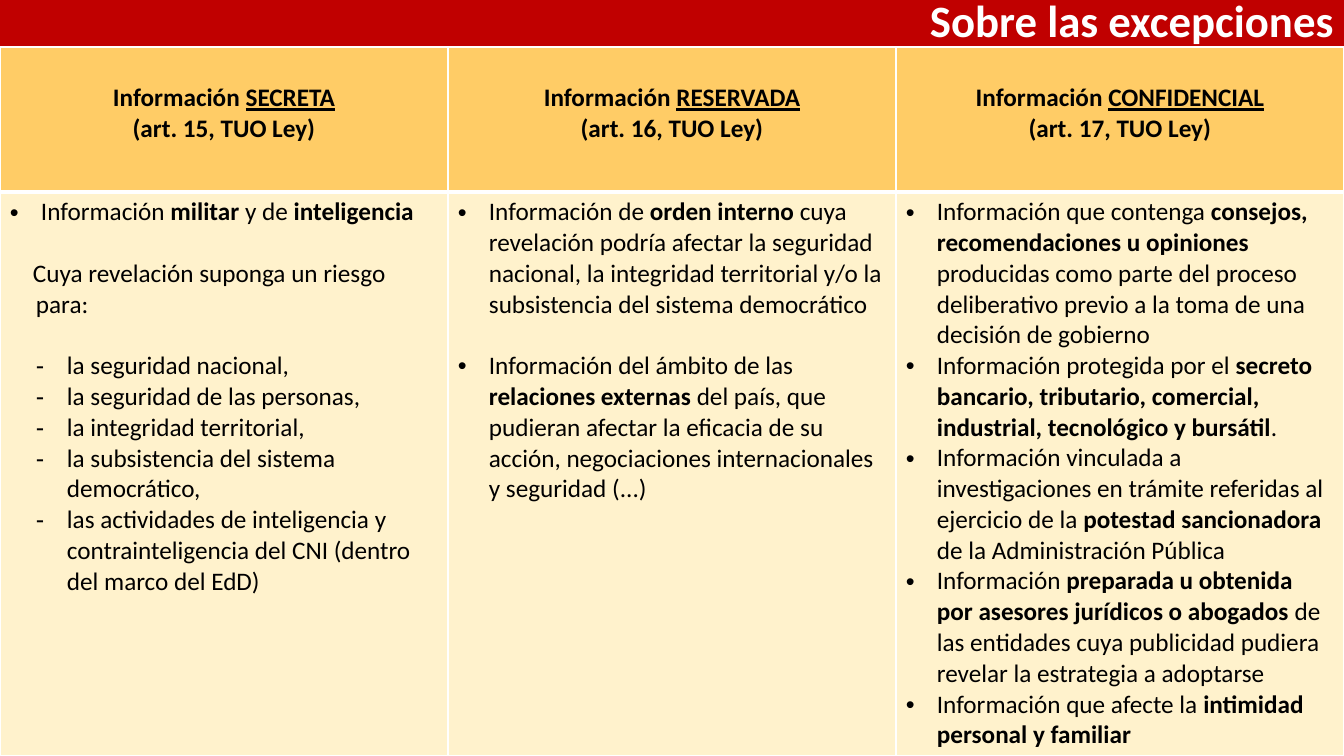
from dataclasses import dataclass

from lxml import etree
from pptx import Presentation
from pptx.dml.color import RGBColor
from pptx.enum.shapes import MSO_SHAPE
from pptx.enum.text import MSO_ANCHOR, PP_ALIGN
from pptx.oxml.ns import qn
from pptx.util import Pt

RECTANGLE = MSO_SHAPE.RECTANGLE
TOP, MIDDLE = MSO_ANCHOR.TOP, MSO_ANCHOR.MIDDLE
LEFT, CENTER, RIGHT = PP_ALIGN.LEFT, PP_ALIGN.CENTER, PP_ALIGN.RIGHT

SLIDE_W, SLIDE_H = 1344, 756
EMU_PER_PX = 12192000 / SLIDE_W
TITLE_H, HEADER_H = 47, 145
BODY_H = SLIDE_H - TITLE_H - HEADER_H
PAD_X, PAD_Y = 10, 5
HEADER_PAD_TOP = 36


@dataclass(frozen=True)
class Theme:
    font: str = "Calibri"
    bullet_font: str = "Arial"
    title_size: int = 32
    text_size: int = 18
    line_gap: int = 22
    thin: int = 1
    thick: int = 3
    red: str = "C00000"
    amber: str = "FFCC66"
    cream: str = "FFF2CC"
    white: str = "FFFFFF"
    black: str = "000000"


THEME = Theme()

# Paragraph layouts: left margin and first-line indent in px, with the marker.
DOT = dict(margin=31, indent=-31, marker="•")
DASH = dict(margin=57, indent=-31, marker="-")
LEAD_IN = dict(margin=26, indent=-3)
GAP = dict(before=THEME.line_gap)

# Text between asterisks is emphasised.
HEADERS = [
    ("Información *SECRETA*", "(art. 15, TUO Ley)"),
    ("Información *RESERVADA*", "(art. 16, TUO Ley)"),
    ("Información *CONFIDENCIAL*", "(art. 17, TUO Ley)"),
]
SECRET = [
    ("Información *militar* y de *inteligencia*", DOT),
    ("Cuya revelación suponga un riesgo para:", LEAD_IN | GAP),
    ("la seguridad nacional,", DASH | GAP),
    ("la seguridad de las personas,", DASH),
    ("la integridad territorial,", DASH),
    ("la subsistencia del sistema democrático,", DASH),
    ("las actividades de inteligencia y contrainteligencia del CNI "
     "(dentro del marco del EdD)", DASH),
]
RESERVED = [
    ("Información de *orden interno *cuya revelación podría afectar la seguridad "
     "nacional, la integridad territorial y/o la subsistencia del sistema "
     "democrático", DOT),
    ("Información del ámbito de las *relaciones externas *del país, que pudieran "
     "afectar la eficacia de su acción, negociaciones internacionales y "
     "seguridad (...)", DOT | GAP),
]
CONFIDENTIAL = [
    ("Información que contenga *consejos, recomendaciones u opiniones* producidas "
     "como parte del proceso deliberativo previo a la toma de una decisión de "
     "gobierno", DOT),
    ("Información protegida por el *secreto bancario, tributario, comercial, "
     "industrial, tecnológico y bursátil*.", DOT),
    ("Información vinculada a investigaciones en trámite referidas al ejercicio "
     "de la *potestad sancionadora *de la Administración Pública", DOT),
    ("Información *preparada u obtenida por asesores jurídicos o abogados* de las "
     "entidades cuya publicidad pudiera revelar la estrategia a adoptarse", DOT),
    ("Información que afecte la *intimidad personal y familiar*", DOT),
]
BODIES = [SECRET, RESERVED, CONFIDENTIAL]


def px(length):
    return round(length * EMU_PER_PX)


def rgb(color):
    return RGBColor.from_string(color)


def paint(target, color):
    target.fill.solid()
    target.fill.fore_color.rgb = rgb(color)


def set_indent(paragraph, margin, indent, marker):
    properties = paragraph._p.get_or_add_pPr()
    properties.set("marL", str(px(margin)))
    properties.set("indent", str(px(indent)))
    if marker:
        etree.SubElement(properties, qn("a:buFont"), typeface=THEME.bullet_font)
        etree.SubElement(properties, qn("a:buChar"), char=marker)
    else:
        etree.SubElement(properties, qn("a:buNone"))


def write(frame, text, *, size=THEME.text_size, color=THEME.black, align=LEFT,
          bold=False, underline_emphasis=False, margin=0, indent=0, marker=None,
          before=0, spacing=None):
    """Add a paragraph; emphasis is bold, or underlined if requested."""
    first = frame.paragraphs[0]
    paragraph = frame.add_paragraph() if first.runs else first
    set_indent(paragraph, margin, indent, marker)
    paragraph.alignment = align
    if before:
        paragraph.space_before = Pt(before)
    if spacing:
        paragraph.line_spacing = spacing
    for position, part in enumerate(text.split("*")):
        if not part:
            continue
        emphasised = position % 2 == 1
        run = paragraph.add_run()
        run.text = part
        run.font.name = THEME.font
        run.font.size = Pt(size)
        run.font.color.rgb = rgb(color)
        run.font.bold = bold or emphasised
        run.font.underline = emphasised and underline_emphasis


def set_margins(box, top=PAD_Y):
    box.margin_left = box.margin_right = px(PAD_X)
    box.margin_top, box.margin_bottom = px(top), px(PAD_Y)


def add_title_bar(slide, text):
    bar = slide.shapes.add_shape(RECTANGLE, 0, 0, px(SLIDE_W), px(TITLE_H))
    bar.shadow.inherit = False
    bar.line.fill.background()
    paint(bar, THEME.red)
    frame = bar.text_frame
    frame.word_wrap = True
    frame.vertical_anchor = MIDDLE
    set_margins(frame)
    write(frame, text, size=THEME.title_size, color=THEME.white, align=RIGHT,
          bold=True, spacing=0.9)


def style_cell(cell, color, top_line, bottom_line, pad_top=PAD_Y):
    cell.vertical_anchor = TOP
    set_margins(cell, pad_top)
    properties = cell._tc.get_or_add_tcPr()
    widths = {"lnL": THEME.thin, "lnR": THEME.thin,
              "lnT": top_line, "lnB": bottom_line}
    for side, width in widths.items():
        line = etree.SubElement(properties, qn(f"a:{side}"), w=str(Pt(width)))
        fill = etree.SubElement(line, qn("a:solidFill"))
        etree.SubElement(fill, qn("a:srgbClr"), val=THEME.white)
    paint(cell, color)


def add_exceptions_table(slide):
    table = slide.shapes.add_table(
        2, len(HEADERS), 0, px(TITLE_H), px(SLIDE_W), px(HEADER_H + BODY_H)).table
    table.first_row = table.horz_banding = False
    table.rows[0].height, table.rows[1].height = px(HEADER_H), px(BODY_H)
    for column, (header, body) in enumerate(zip(HEADERS, BODIES)):
        table.columns[column].width = px(SLIDE_W // len(HEADERS))
        header_cell, body_cell = table.cell(0, column), table.cell(1, column)
        style_cell(header_cell, THEME.amber, THEME.thin, THEME.thick, HEADER_PAD_TOP)
        style_cell(body_cell, THEME.cream, THEME.thick, THEME.thin)
        for text in header:
            write(header_cell.text_frame, text, align=CENTER, bold=True,
                  underline_emphasis=True)
        for text, layout in body:
            write(body_cell.text_frame, text, **layout)


def main():
    presentation = Presentation()
    presentation.slide_width, presentation.slide_height = px(SLIDE_W), px(SLIDE_H)
    slide = presentation.slides.add_slide(presentation.slide_layouts[6])
    add_title_bar(slide, "Sobre las excepciones")
    add_exceptions_table(slide)
    presentation.save("out.pptx")


if __name__ == "__main__":
    main()
